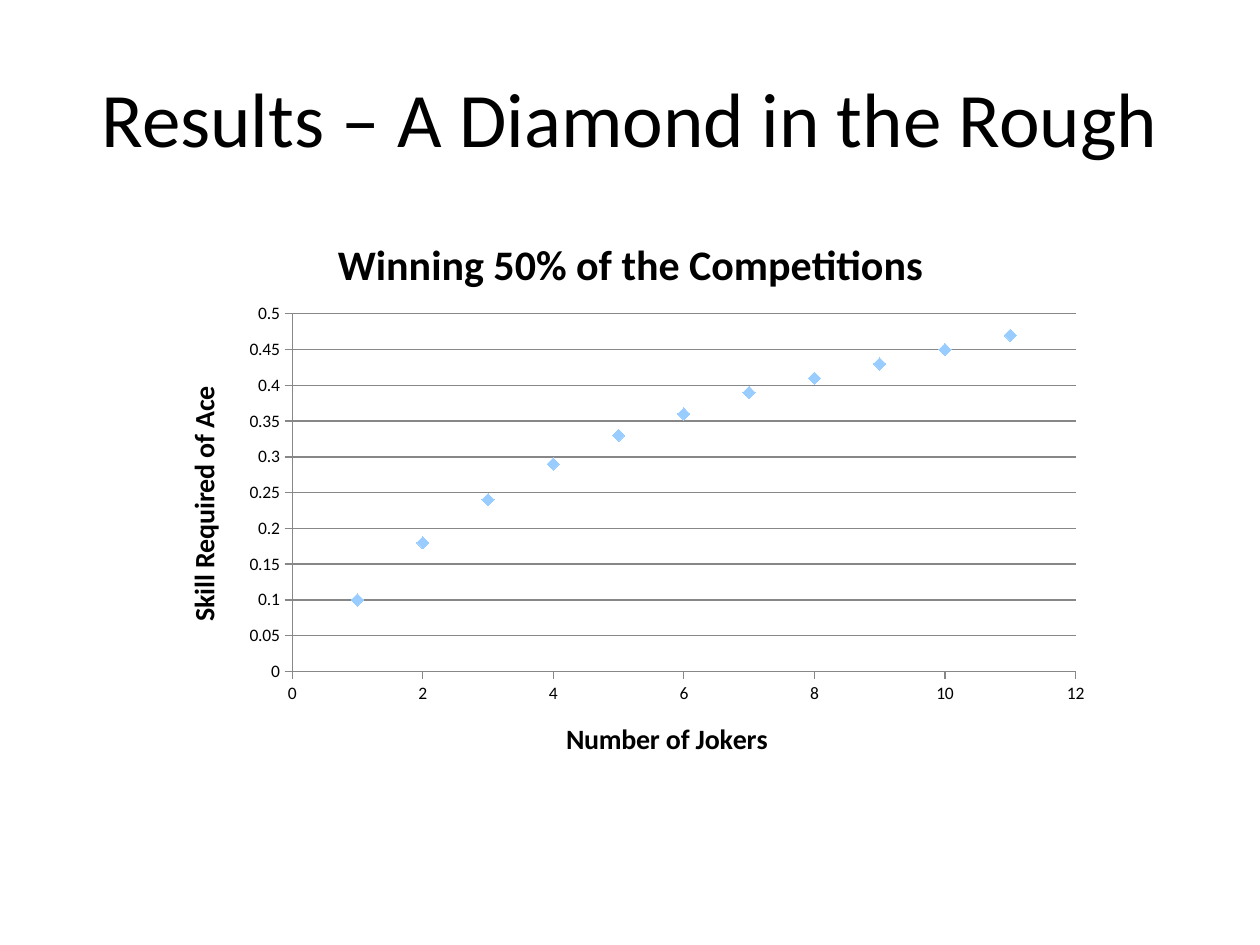
from dataclasses import dataclass

from lxml import etree
from pptx import Presentation
from pptx.chart import data as chart_data
from pptx.dml import color
from pptx.enum import chart as charts, text
from pptx.oxml import ns
from pptx.util import Emu, Pt

PX = 914400 / 126


@dataclass(frozen=True)
class Theme:
    font: str = "Calibri"
    ink: str = "000000"
    grid: str = "878787"
    marker: str = "99CCFF"
    paper: str = "FFFFFF"
    title: int = 44
    chart_title: int = 24
    axis_title: int = 16
    label: int = 10


THEME = Theme()


def px(length):
    return Emu(round(length * PX))


def rgb(value):
    return color.RGBColor.from_string(value)


def style_font(font, size, bold=False):
    font.name, font.size, font.bold = THEME.font, Pt(size), bold
    font.color.rgb = rgb(THEME.ink)


def write(frame, words, size, bold=False, align=None):
    para = frame.paragraphs[0]
    para.alignment = align
    span = para.add_run()
    span.text = words
    style_font(span.font, size, bold)


def set_plot_box(chart, box, plot_box):
    """Fix the inner plot area, given in px relative to the chart's box."""
    area = chart.element.find(".//" + ns.qn("c:plotArea"))
    for old in area.findall(ns.qn("c:layout")):
        area.remove(old)
    layout = etree.Element(ns.qn("c:layout"))
    area.insert(0, layout)
    manual = etree.SubElement(layout, ns.qn("c:manualLayout"))
    settings = [("layoutTarget", "inner"), ("xMode", "edge"), ("yMode", "edge")]
    sizes = (box[2], box[3]) * 2
    settings += [(key, str(round(part / whole, 3)))
                 for key, part, whole in zip("xywh", plot_box, sizes)]
    for key, value in settings:
        etree.SubElement(manual, ns.qn("c:" + key)).set("val", value)


def style_axis(axis, title, top, step, number_format, grid):
    axis.minimum_scale, axis.maximum_scale, axis.major_unit = 0, top, step
    axis.has_major_gridlines = grid
    axis.major_tick_mark = charts.XL_TICK_MARK.OUTSIDE
    axis.minor_tick_mark = charts.XL_TICK_MARK.NONE
    lines = [axis.format.line]
    if grid:
        lines.append(axis.major_gridlines.format.line)
    for line in lines:
        line.color.rgb = rgb(THEME.grid)
        line.width = Pt(0.75)
    style_font(axis.tick_labels.font, THEME.label)
    axis.tick_labels.number_format = number_format
    axis.tick_labels.number_format_is_linked = False
    write(axis.axis_title.text_frame, title, THEME.axis_title, bold=True)


def add_title(page, box):
    frame = page.shapes.add_textbox(*map(px, box)).text_frame
    frame.word_wrap = True
    frame.vertical_anchor = text.MSO_ANCHOR.MIDDLE
    write(frame, "Results – A Diamond in the Rough", THEME.title,
          align=text.PP_ALIGN.CENTER)


def add_skill_chart(page, box):
    skills = [0.1, 0.18, 0.24, 0.29, 0.33, 0.36, 0.39, 0.41, 0.43, 0.45, 0.47]
    points = chart_data.XyChartData()
    series_data = points.add_series("Series 1")
    for jokers, skill in enumerate(skills, start=1):
        series_data.add_data_point(jokers, skill)

    chart = page.shapes.add_chart(
        charts.XL_CHART_TYPE.XY_SCATTER, *map(px, box), points).chart
    chart.has_legend = False
    style_font(chart.font, THEME.label)
    write(chart.chart_title.text_frame, "Winning 50% of the Competitions",
          THEME.chart_title, bold=True)
    set_plot_box(chart, box, (134, 104, 783, 358))

    # Axes
    style_axis(chart.category_axis, "Number of Jokers", 12, 2, "General", False)
    style_axis(chart.value_axis, "Skill Required of Ace", 0.5, 0.05, "General", True)

    # Diamond markers without a joining line
    chart.plots[0].vary_by_categories = False
    series = chart.plots[0].series[0]
    series.smooth = False
    series.format.line.fill.background()
    series.marker.style = charts.XL_MARKER_STYLE.DIAMOND
    series.marker.size = 7
    series.marker.format.fill.solid()
    series.marker.format.fill.fore_color.rgb = rgb(THEME.marker)
    series.marker.format.line.color.rgb = rgb(THEME.marker)


def main():
    deck = Presentation()
    deck.slide_width, deck.slide_height = px(1260), px(945)
    page = deck.slides.add_slide(deck.slide_layouts[6])
    page.background.fill.solid()
    page.background.fill.fore_color.rgb = rgb(THEME.paper)
    add_title(page, (63, 38, 1134, 158))
    add_skill_chart(page, (158, 210, 945, 577))
    deck.save("out.pptx")


if __name__ == "__main__":
    main()
